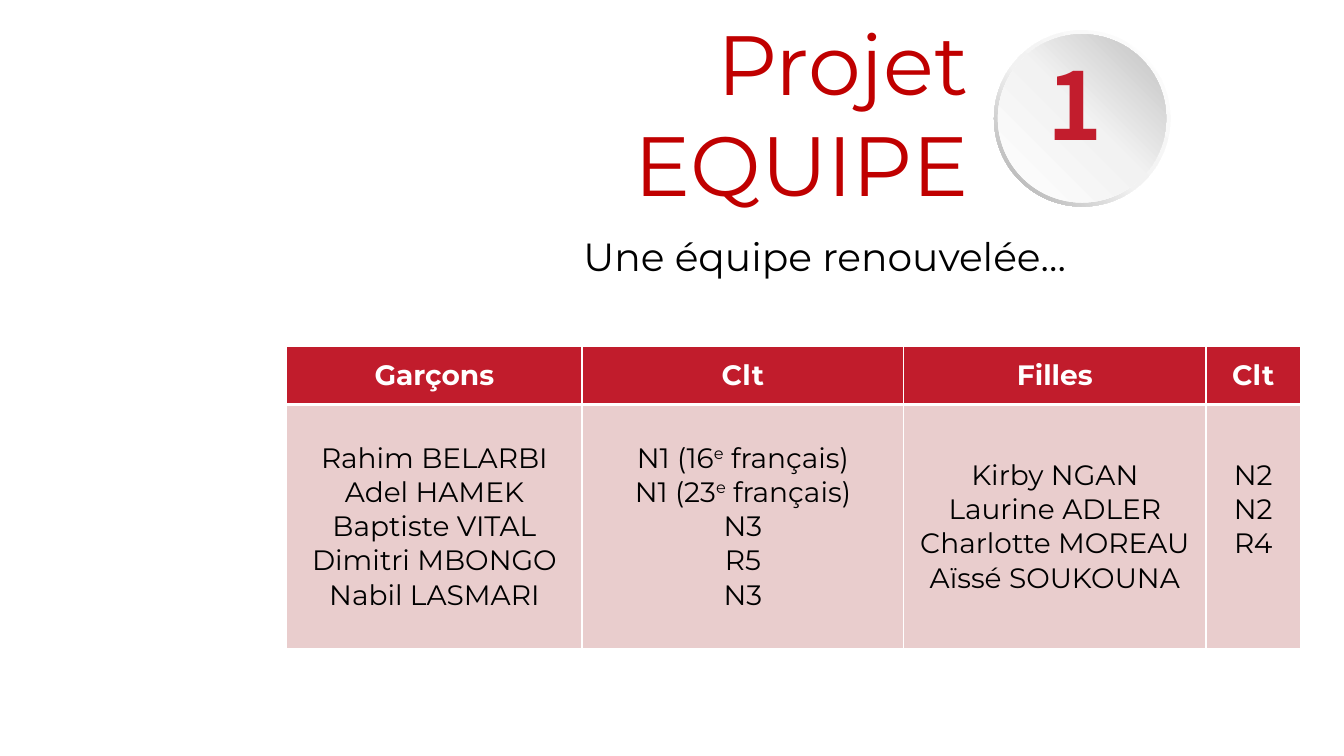
from copy import deepcopy
from dataclasses import dataclass

from lxml.etree import SubElement
from pptx import Presentation
from pptx.dml.color import RGBColor
from pptx.enum.shapes import MSO_SHAPE as Shape
from pptx.enum.text import MSO_ANCHOR as Anchor, MSO_AUTO_SIZE as AutoSize, PP_ALIGN as Align
from pptx.oxml.ns import qn
from pptx.shapes.group import GroupShape
from pptx.slide import Slide
from pptx.table import _Cell as Cell
from pptx.text.text import TextFrame
from pptx.util import Pt


@dataclass(frozen=True)
class Theme:
    font: str = "Montserrat"
    number_font: str = "Noto Sans CJK SC"
    title: str = "C00000"
    number: str = "C21D2D"
    header: str = "C11C2C"
    body: str = "E9CDCD"
    white: str = "FFFFFF"
    black: str = "000000"
    title_size: float = 60
    number_size: float = 66.7
    subtitle_size: float = 28
    table_size: float = 20


@dataclass(frozen=True)
class Disc:
    kind: Shape
    left: float
    top: float
    size: float
    stops: tuple[tuple[float, str], ...]
    angle: float


@dataclass(frozen=True)
class Column:
    heading: str
    width: float
    lines: tuple[str, ...]


THEME = Theme()
SUPERSCRIPT_MARK = "^"
LINE_HEIGHT = 24.4
HEADER_HEIGHT, BODY_HEIGHT = 41.8, 174.2

DISCS = (
    Disc(Shape.DONUT, 710, 21.6, 126, ((0, "FFFFFF"), (0.55, "F2F2F2"), (1, "A6A6A6")), 225),
    Disc(Shape.OVAL, 712.8, 24.5, 120.2, ((0, "FFFFFF"), (0.51, "F2F2F2"), (1, "BFBFBF")), 45),
)
COLUMNS = (
    Column("Garçons", 211, ("Rahim BELARBI", "Adel HAMEK", "Baptiste VITAL",
                            "Dimitri MBONGO", "Nabil LASMARI")),
    Column("Clt", 229.7, ("N1 (16^e^ français)", "N1 (23^e^ français)", "N3", "R5", "N3")),
    Column("Filles", 216, ("Kirby NGAN", "Laurine ADLER", "Charlotte MOREAU", "Aïssé SOUKOUNA")),
    Column("Clt", 67.4, ("N2", "N2", "R4")),
)


def format_text(frame: TextFrame, size: float, color: str, align: Align = Align.LEFT,
                bold: bool = False, font: str = THEME.font) -> None:
    for para in frame.paragraphs:
        para.alignment = align
        for span in para.runs:
            span.font.name = font
            span.font.size = Pt(size)
            span.font.bold = bold
            span.font.color.rgb = RGBColor.from_string(color)


def add_text(page: Slide, text: str, left: float, top: float, width: float, height: float) -> TextFrame:
    frame = page.shapes.add_textbox(Pt(left), Pt(top), Pt(width), Pt(height)).text_frame
    frame.word_wrap = True
    frame.text = text
    return frame


def add_disc(badge: GroupShape, disc: Disc) -> None:
    shape = badge.shapes.add_shape(disc.kind, Pt(disc.left), Pt(disc.top), Pt(disc.size), Pt(disc.size))
    if disc.kind == Shape.DONUT:
        shape.adjustments[0] = 0.049
    shape.shadow.inherit = False
    shape.line.fill.background()
    shape.fill.gradient()
    shape.fill.gradient_angle = disc.angle
    # A new gradient has two stops; the third is a clone
    stop_list = shape.element.spPr.find(qn("a:gradFill")).find(qn("a:gsLst"))
    stop_list.append(deepcopy(stop_list[0]))
    for stop, (position, color) in zip(shape.fill.gradient_stops, disc.stops):
        stop.position = position
        stop.color.rgb = RGBColor.from_string(color)


def set_borders(cell: Cell, top: float, bottom: float) -> None:
    properties = cell._tc.get_or_add_tcPr()
    for index, (side, width) in enumerate((("L", 1), ("R", 1), ("T", top), ("B", bottom))):
        border = SubElement(properties, qn(f"a:ln{side}"), w=str(Pt(width)))
        fill = SubElement(border, qn("a:solidFill"))
        SubElement(fill, qn("a:srgbClr"), val=THEME.white)
        properties.insert(index, border)


def fill_cell(cell: Cell, lines: tuple[str, ...], fill: str, color: str, bold: bool) -> None:
    frame = cell.text_frame
    frame.text = "\n".join(line.split(SUPERSCRIPT_MARK)[0] for line in lines)
    for para, line in zip(frame.paragraphs, lines):
        for index, part in enumerate(line.split(SUPERSCRIPT_MARK)[1:]):
            span = para.add_run()
            span.text = part
            if index % 2 == 0:
                span.font._element.set("baseline", "30000")
    format_text(frame, THEME.table_size, color, Align.CENTER, bold)
    cell.vertical_anchor = Anchor.MIDDLE
    cell.fill.solid()
    cell.fill.fore_color.rgb = RGBColor.from_string(fill)


def add_team_table(page: Slide) -> None:
    width = sum(column.width for column in COLUMNS)
    table = page.shapes.add_table(2, len(COLUMNS), Pt(204.8), Pt(247.2), Pt(width),
                                  Pt(HEADER_HEIGHT + BODY_HEIGHT)).table
    table.rows[0].height, table.rows[1].height = Pt(HEADER_HEIGHT), Pt(BODY_HEIGHT)
    for index, column in enumerate(COLUMNS):
        table.columns[index].width = Pt(column.width)
        heading, body = table.cell(0, index), table.cell(1, index)
        fill_cell(heading, (column.heading,), THEME.header, THEME.white, True)
        fill_cell(body, column.lines, THEME.body, THEME.black, False)
        set_borders(heading, 1, 3)
        set_borders(body, 3, 1)
    # The last ranking list lines up with the four names beside it
    missing = len(COLUMNS[2].lines) - len(COLUMNS[3].lines)
    table.cell(1, 3).margin_bottom = Pt(3.6 + missing * LINE_HEIGHT)


def main() -> None:
    deck = Presentation()
    deck.slide_width, deck.slide_height = Pt(960), Pt(540)
    page = deck.slides.add_slide(deck.slide_layouts[5])

    # Numbered badge
    badge = page.shapes.add_group_shape()
    for disc in DISCS:
        add_disc(badge, disc)
    number = add_text(page, "1", 748, 33.5, 80, 96)
    number.margin_left = number.margin_top = number.margin_right = number.margin_bottom = 0
    format_text(number, THEME.number_size, THEME.number, bold=True, font=THEME.number_font)

    # Title and subtitle
    title = page.shapes.title
    title.left, title.top, title.width, title.height = Pt(229.7), Pt(4.7), Pt(469.4), Pt(153)
    frame = title.text_frame
    frame.text = "Projet\nEQUIPE"
    frame.auto_size = AutoSize.NONE
    frame.vertical_anchor = Anchor.TOP
    format_text(frame, THEME.title_size, THEME.title, Align.RIGHT)
    subtitle = add_text(page, "Une équipe renouvelée…", 409.7, 162.7, 444.2, 85)
    format_text(subtitle, THEME.subtitle_size, THEME.black)

    # Team table
    add_team_table(page)
    deck.save("out.pptx")


if __name__ == "__main__":
    main()
